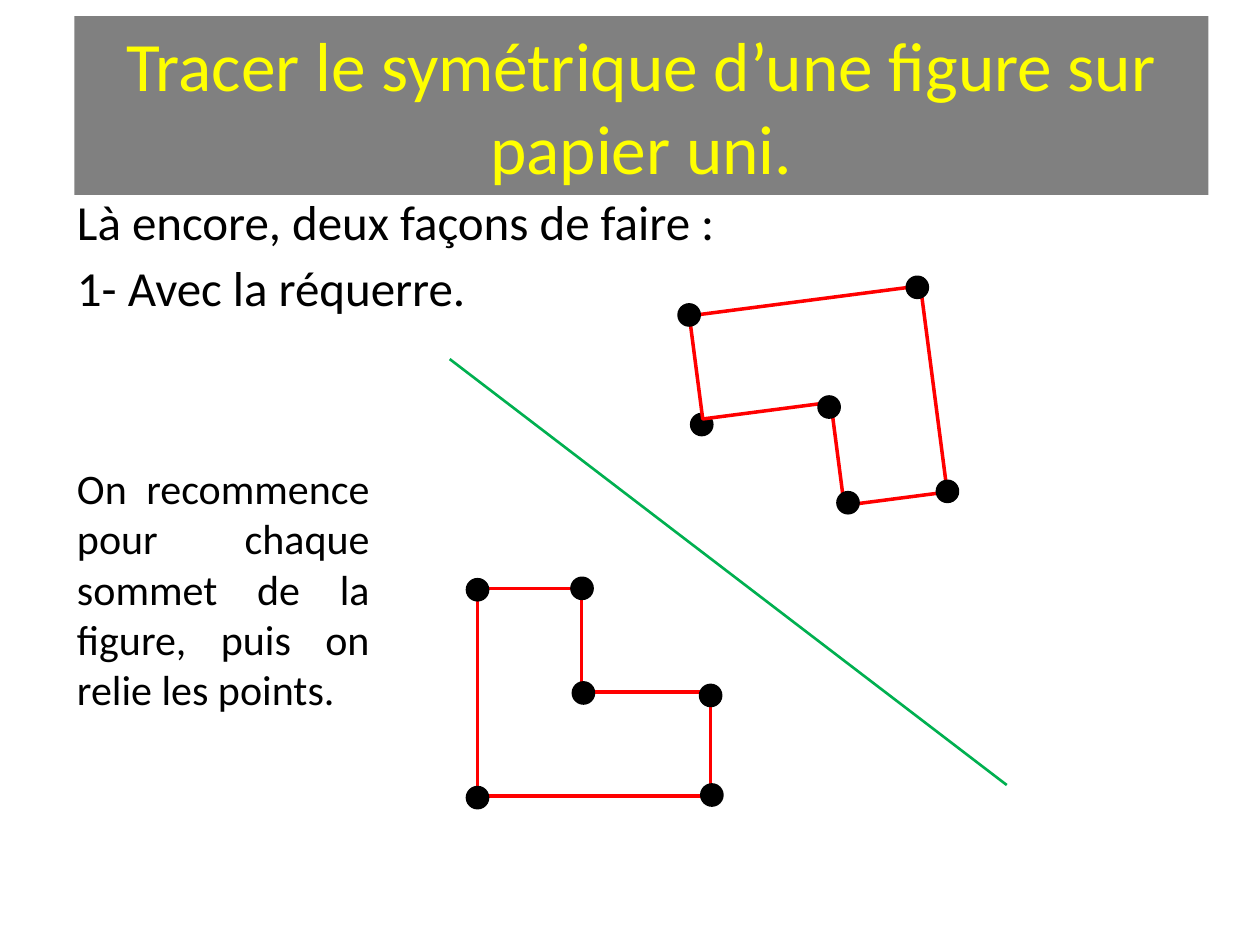
from pptx import Presentation
from pptx.dml.color import RGBColor
from pptx.enum.shapes import MSO_CONNECTOR, MSO_SHAPE
from pptx.enum.text import MSO_ANCHOR, PP_ALIGN
from pptx.oxml.ns import qn
from pptx.util import Pt
from lxml import etree

BLACK = RGBColor(0x00, 0x00, 0x00)
WHITE = RGBColor(0xFF, 0xFF, 0xFF)
GRAY = RGBColor(0x80, 0x80, 0x80)
YELLOW = RGBColor(0xFF, 0xFF, 0x00)
RED = RGBColor(0xFF, 0x00, 0x00)
GREEN = RGBColor(0x00, 0xB0, 0x50)

STRAIGHT = MSO_CONNECTOR.STRAIGHT
ELLIPSE, CORNER = MSO_SHAPE.OVAL, MSO_SHAPE.CORNER
CENTER, JUSTIFY = PP_ALIGN.CENTER, PP_ALIGN.JUSTIFY
TOP, MIDDLE = MSO_ANCHOR.TOP, MSO_ANCHOR.MIDDLE

FONT = "Calibri"
DOT_SIZE = 11.5
FIGURE_SIZE = (133.2, 118.8)

# Centres of the vertices, in points
FIGURE_VERTICES = [(333.4, 396), (272.9, 455.8), (272.9, 337), (406.1, 397.4), (406.8, 454.3)]
MIRROR_VERTICES = [(393.8, 180), (473.8, 232.6), (484.6, 287.3), (524.2, 164.2), (541.4, 280.8)]
VERTICES_BEHIND_MIRROR = [(332.6, 336.2), (401, 242.6)]


def add_text(page, text, left, top, width, height, *, size, color=BLACK,
             align=JUSTIFY, anchor=TOP, fill=None):
    box = page.shapes.add_textbox(Pt(left), Pt(top), Pt(width), Pt(height))
    if fill is not None:
        box.fill.solid()
        box.fill.fore_color.rgb = fill
    frame = box.text_frame
    frame.word_wrap = True
    frame.vertical_anchor = anchor
    para = frame.paragraphs[0]
    para.alignment = align
    span = para.add_run()
    span.text = text
    span.font.name = FONT
    span.font.size = Pt(size)
    span.font.color.rgb = color


def add_outlined(page, kind, left, top, width, height, *, fill, line):
    shape = page.shapes.add_shape(kind, Pt(left), Pt(top), Pt(width), Pt(height))
    shape.shadow.inherit = False
    shape.fill.solid()
    shape.fill.fore_color.rgb = fill
    shape.line.color.rgb = line
    shape.line.width = Pt(2)
    return shape


def add_figure(page, left, top, rotation=0):
    figure = add_outlined(page, CORNER, left, top, *FIGURE_SIZE, fill=WHITE, line=RED)
    figure.rotation = rotation


def add_vertices(page, centers):
    for x, y in centers:
        add_outlined(page, ELLIPSE, x - DOT_SIZE / 2, y - DOT_SIZE / 2,
                     DOT_SIZE, DOT_SIZE, fill=BLACK, line=BLACK)


def add_axis(page, start, end):
    axis = page.shapes.add_connector(STRAIGHT, *map(Pt, start + end))
    axis.line.color.rgb = GREEN
    axis.line.width = Pt(1.5)
    etree.SubElement(axis._element.spPr, qn("a:effectLst"))


def main():
    deck = Presentation()
    deck.slide_width, deck.slide_height = Pt(720), Pt(540)
    page = deck.slides.add_slide(deck.slide_layouts[6])

    add_figure(page, 272.9, 336.2)
    add_text(page, "Tracer le symétrique d’une figure sur papier uni.",
             42.5, 9.2, 648, 102.2, size=39.6, color=YELLOW,
             align=CENTER, anchor=MIDDLE, fill=GRAY)
    add_text(page, "Là encore, deux façons de faire :", 36.9, 105.8, 646.6, 41, size=28)
    add_text(page, "1- Avec la réquerre.", 36.9, 143.6, 646.6, 41, size=28)
    add_text(page, "On recommence pour chaque sommet de la figure, puis on relie les points.",
             36.9, 260.6, 181.4, 152.6, size=24)

    add_vertices(page, VERTICES_BEHIND_MIRROR)
    add_axis(page, (257, 205.2), (575.3, 448.6))
    add_figure(page, 401, 171.4, rotation=172.6)
    add_vertices(page, FIGURE_VERTICES + MIRROR_VERTICES)

    deck.save("out.pptx")


if __name__ == "__main__":
    main()
